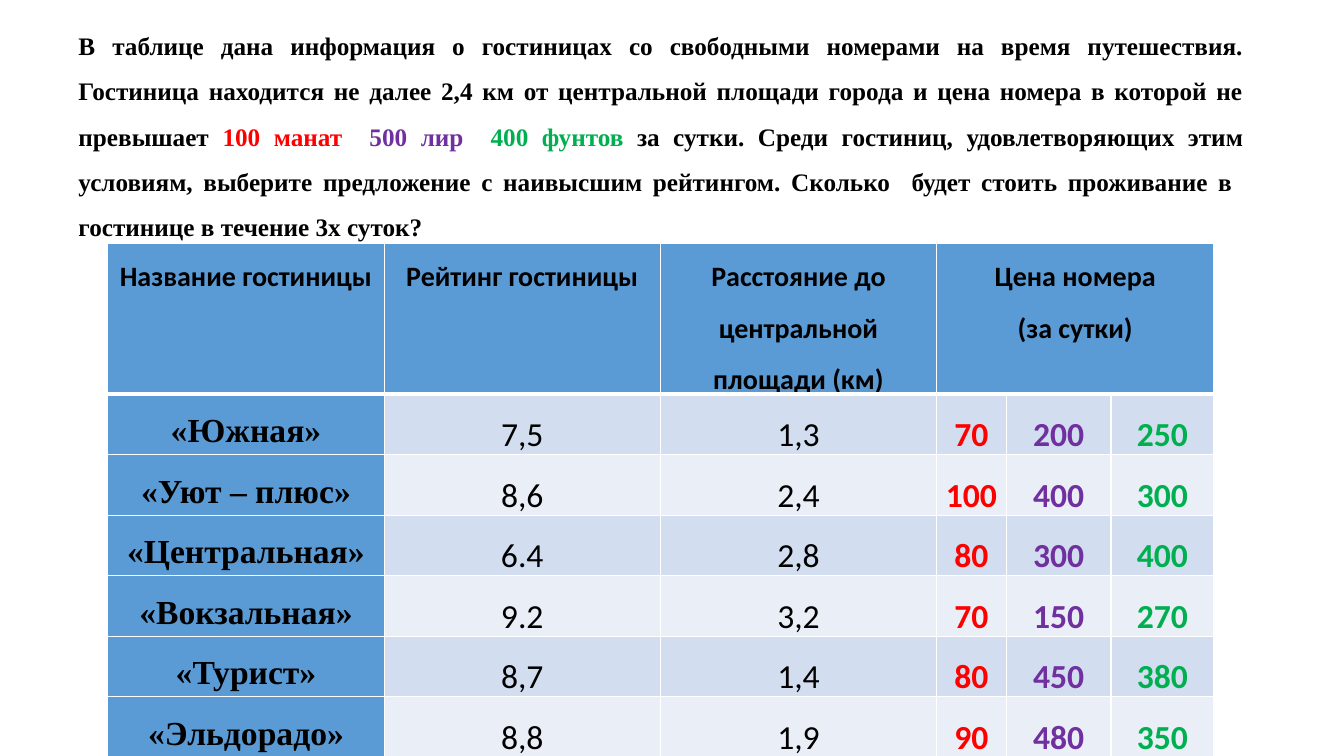
from pptx import Presentation
from pptx.dml.color import RGBColor
from pptx.enum.text import MSO_AUTO_SIZE, PP_ALIGN
from pptx.oxml.ns import qn
from pptx.util import Inches, Pt
from lxml import etree

CENTER, JUSTIFY = PP_ALIGN.CENTER, PP_ALIGN.JUSTIFY
GROW = MSO_AUTO_SIZE.SHAPE_TO_FIT_TEXT


class Theme:
    serif, sans = "Times New Roman", "Calibri"
    black, white = "000000", "FFFFFF"
    red, violet, green = "FF0000", "7030A0", "00B050"
    head, bands = "5B9BD5", ("D2DEEF", "EAEFF7")
    task, label, body = 18, 20, 24
    thin, thick = 1, 3
    lead = 1.5


# Content
TASK = [
    ("В таблице дана информация о гостиницах со свободными номерами на время "
     "путешествия. Гостиница находится не далее 2,4 км от центральной площади "
     "города и цена номера в которой не превышает ", Theme.black),
    ("100 манат  ", Theme.red),
    ("500 лир  ", Theme.violet),
    ("400 фунтов ", Theme.green),
    ("за сутки. Среди гостиниц, удовлетворяющих этим условиям, выберите "
     "предложение с наивысшим рейтингом. Сколько  будет стоить проживание в  "
     "гостинице в течение 3х суток?", Theme.black),
]
HEADS = [
    ["Название гостиницы"],
    ["Рейтинг гостиницы"],
    ["Расстояние до центральной площади (км)"],
    ["Цена номера", "(за сутки)"],
]
HOTELS = [
    ("«Южная»", "7,5", "1,3", "70", "200", "250"),
    ("«Уют – плюс»", "8,6", "2,4", "100", "400", "300"),
    ("«Центральная»", "6.4", "2,8", "80", "300", "400"),
    ("«Вокзальная»", "9.2", "3,2", "70", "150", "270"),
    ("«Турист»", "8,7", "1,4", "80", "450", "380"),
    ("«Эльдорадо»", "8,8", "1,9", "90", "480", "350"),
]

# Column rules: width, font, colour, bold
COLS = [
    (2.74, Theme.serif, Theme.black, True),
    (2.74, Theme.sans, Theme.black, False),
    (2.74, Theme.sans, Theme.black, False),
    (0.69, Theme.sans, Theme.red, True),
    (1.04, Theme.sans, Theme.violet, True),
    (1.02, Theme.sans, Theme.green, True),
]
ROWS = [1.25, 0.37, 0.55] + [0.37] * 4
WIDE, HIGH = 13.33, 7.5
TASK_BOX = (0.68, 0.1, 11.75, 2.99)
GRID_BOX = (1.07, 2.41, sum(col[0] for col in COLS), 5)


def add_run(para, text, size, face, color, bold):
    run = para.add_run()
    run.text = text
    run.font.size, run.font.name, run.font.bold = Pt(size), face, bold
    run.font.color.rgb = RGBColor.from_string(color)


def add_edges(cell, low):
    """Draw white borders; low is the width of the bottom one."""
    props = cell._tc.get_or_add_tcPr()
    widths = (Theme.thin, Theme.thin, Theme.thin, low)
    for spot, (side, width) in enumerate(zip("LRTB", widths)):
        line = etree.Element(qn("a:ln" + side), w=str(Pt(width)))
        fill = etree.SubElement(line, qn("a:solidFill"))
        etree.SubElement(fill, qn("a:srgbClr"), val=Theme.white)
        props.insert(spot, line)


def fill_cell(cell, lines, fill, style, low=Theme.thin):
    cell.fill.solid()
    cell.fill.fore_color.rgb = RGBColor.from_string(fill)
    cell.margin_left = cell.margin_right = Inches(0.07)
    cell.margin_top = cell.margin_bottom = 0
    for n, text in enumerate(lines):
        frame = cell.text_frame
        para = frame.add_paragraph() if n else frame.paragraphs[0]
        para.alignment, para.line_spacing = CENTER, Theme.lead
        add_run(para, text, *style)
    add_edges(cell, low)


def add_task(slide):
    frame = slide.shapes.add_textbox(*map(Inches, TASK_BOX)).text_frame
    frame.word_wrap, frame.auto_size = True, GROW
    para = frame.paragraphs[0]
    para.alignment, para.line_spacing = JUSTIFY, Theme.lead
    para.space_after = Pt(8)
    for text, color in TASK:
        add_run(para, text, Theme.task, Theme.serif, color, True)


def add_grid(slide):
    shape = slide.shapes.add_table(len(ROWS), len(COLS), *map(Inches, GRID_BOX))
    grid = shape.table
    for col, (width, *_) in zip(grid.columns, COLS):
        col.width = Inches(width)
    for row, height in zip(grid.rows, ROWS):
        row.height = Inches(height)
    shape.height = Inches(GRID_BOX[3])

    # Header row, price heading across three currencies
    grid.cell(0, 3).merge(grid.cell(0, 5))
    style = (Theme.label, Theme.sans, Theme.black, True)
    for c in range(len(COLS)):
        lines = HEADS[c] if c < len(HEADS) else []
        fill_cell(grid.cell(0, c), lines, Theme.head, style, Theme.thick)

    # Hotel rows in alternating bands
    for r, hotel in enumerate(HOTELS):
        for c, (text, (_, *look)) in enumerate(zip(hotel, COLS)):
            fill = Theme.bands[r % 2] if c else Theme.head
            fill_cell(grid.cell(r + 1, c), [text], fill, (Theme.body, *look))


def main():
    deck = Presentation()
    deck.slide_width, deck.slide_height = Inches(WIDE), Inches(HIGH)
    slide = deck.slides.add_slide(deck.slide_layouts[6])
    add_task(slide)
    add_grid(slide)
    deck.save("out.pptx")


if __name__ == "__main__":
    main()
